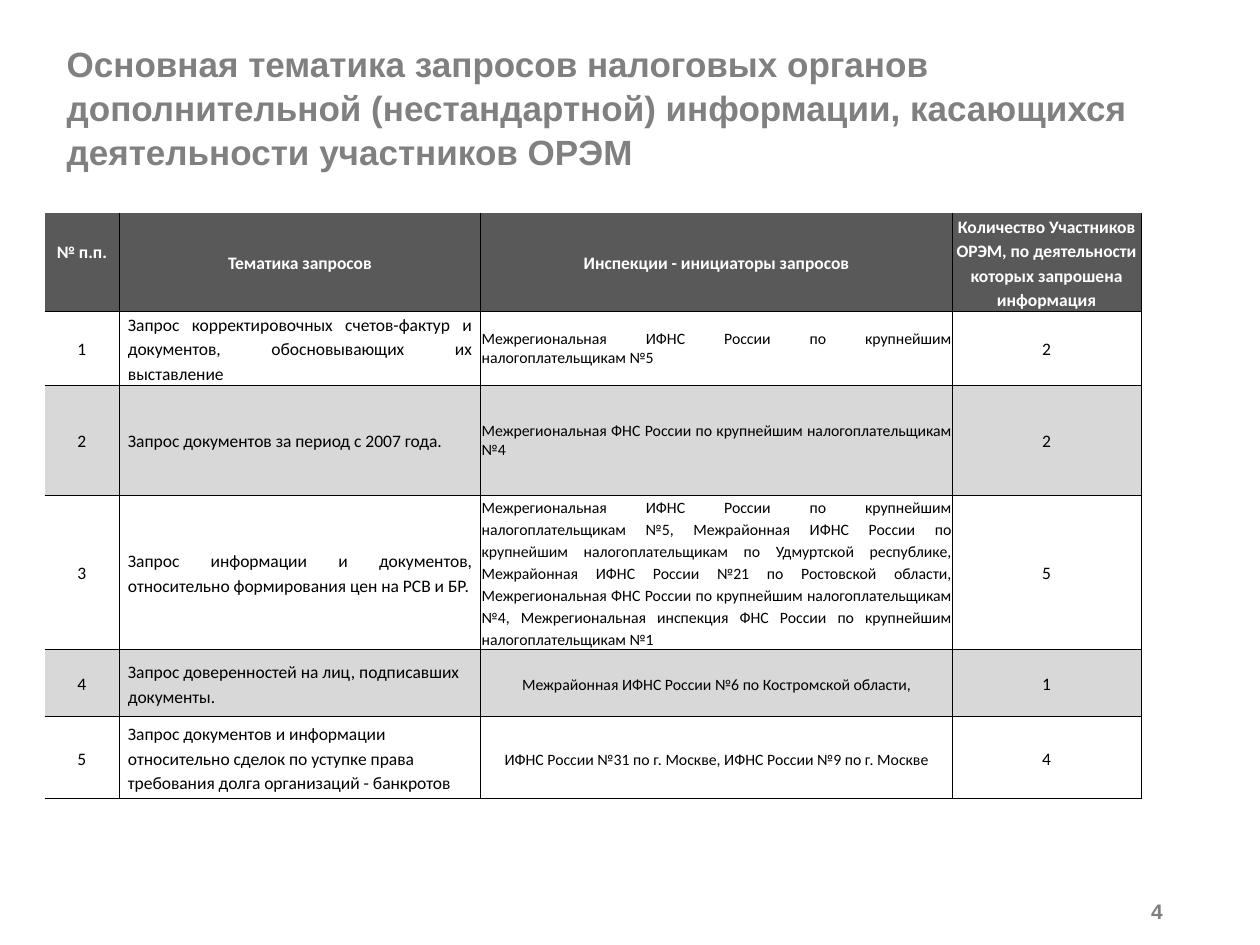
import pptx
import pptx.dml.color
import pptx.enum.text
import pptx.oxml
import pptx.oxml.ns
import pptx.util
from pptx.util import Cm, Pt

RGBColor = pptx.dml.color.RGBColor
ALIGN = pptx.enum.text.PP_ALIGN
MIDDLE = pptx.enum.text.MSO_ANCHOR.MIDDLE

BLACK = RGBColor(0x00, 0x00, 0x00)
WHITE = RGBColor(0xFF, 0xFF, 0xFF)
TITLE_GRAY = RGBColor(0x80, 0x80, 0x80)
NUMBER_GRAY = RGBColor(0x7F, 0x7F, 0x7F)
HEADER_GRAY = RGBColor(0x59, 0x59, 0x59)
BAND_GRAY = RGBColor(0xD8, 0xD8, 0xD8)

HEADERS = [
    "№ п.п.",
    "Тематика запросов",
    "Инспекции - инициаторы запросов",
    "Количество Участников ОРЭМ, по деятельности которых запрошена информация",
]
# topic, its alignment, inspections, their alignment, their line spacing, participants
REQUESTS = [
    ("Запрос корректировочных счетов-фактур и документов, обосновывающих их выставление",
     ALIGN.JUSTIFY,
     "Межрегиональная ИФНС России по крупнейшим налогоплательщикам №5",
     ALIGN.JUSTIFY, 1.0, 2),
    ("Запрос документов за период с 2007 года.", ALIGN.JUSTIFY,
     "Межрегиональная ФНС России по крупнейшим налогоплательщикам №4",
     ALIGN.JUSTIFY, 1.0, 2),
    ("Запрос информации и документов, относительно формирования цен на РСВ и БР.",
     ALIGN.JUSTIFY,
     "Межрегиональная ИФНС России по крупнейшим налогоплательщикам №5, "
     "Межрайонная ИФНС России по крупнейшим налогоплательщикам по Удмуртской республике, "
     "Межрайонная ИФНС России №21 по Ростовской области, "
     "Межрегиональная ФНС России по крупнейшим налогоплательщикам №4, "
     "Межрегиональная инспекция ФНС России по крупнейшим налогоплательщикам №1",
     ALIGN.JUSTIFY, 1.15, 5),
    ("Запрос доверенностей на лиц, подписавших документы.", ALIGN.LEFT,
     "Межрайонная ИФНС России №6 по Костромской области,", ALIGN.CENTER, 1.15, 1),
    ("Запрос документов и информации относительно сделок по уступке права требования "
     "долга организаций - банкротов", ALIGN.LEFT,
     "ИФНС России №31 по г. Москве, ИФНС России №9 по г. Москве", ALIGN.CENTER, 1.15, 4),
]
COLUMN_WIDTHS = [1.5, 7.29, 9.5, 3.81]
ROW_HEIGHTS = [1.98, 1.5, 2.21, 3.12, 1.35, 1.65]


def write(frame, text, align, spacing, font):
    para = frame.paragraphs[0]
    para.alignment = align
    para.line_spacing = spacing
    span = para.add_run()
    span.text = text
    for name, value in font.items():
        if name == "color":
            span.font.color.rgb = value
        else:
            setattr(span.font, name, value)


def set_borders(cell, visible):
    """Draw thin black lines on the visible sides (L, R, T, B) and none on the others."""
    properties = cell._tc.get_or_add_tcPr()
    for place, side in enumerate("LRTB"):
        paint = f'<a:solidFill><a:srgbClr val="{BLACK}"/></a:solidFill>'
        if side not in visible:
            paint = "<a:noFill/>"
        line = pptx.oxml.parse_xml(
            f'<a:ln{side} {pptx.oxml.ns.nsdecls("a")} w="{Pt(0.5)}">{paint}</a:ln{side}>')
        properties.insert(place, line)


deck = pptx.Presentation()
deck.slide_width, deck.slide_height = Cm(25.4), Cm(19.05)
page = deck.slides.add_slide(deck.slide_layouts[5])

title = page.shapes.title
title.left, title.top, title.width, title.height = Cm(1.09), Cm(0.76), Cm(22.4), Cm(2.77)
title.text_frame.word_wrap = True
title.text_frame.auto_size = pptx.enum.text.MSO_AUTO_SIZE.NONE
title.text_frame.vertical_anchor = MIDDLE
write(title.text_frame,
      "Основная тематика запросов налоговых органов дополнительной (нестандартной) "
      "информации, касающихся деятельности участников ОРЭМ",
      ALIGN.LEFT, 1.05,
      {"name": "Arial", "size": Pt(20), "bold": True, "color": TITLE_GRAY})

number_box = page.shapes.add_textbox(Cm(20.9), Cm(17.93), Cm(2.79), Cm(0.86))
number_box.text_frame.word_wrap = True
number_box.text_frame.vertical_anchor = MIDDLE
write(number_box.text_frame, "4", ALIGN.RIGHT, 1.0,
      {"name": "Arial", "size": Pt(12), "bold": True, "color": NUMBER_GRAY})

table = page.shapes.add_table(
    len(ROW_HEIGHTS), len(COLUMN_WIDTHS), Cm(0.9), Cm(4.29),
    Cm(sum(COLUMN_WIDTHS)), Cm(sum(ROW_HEIGHTS))).table
for column, width in zip(table.columns, COLUMN_WIDTHS):
    column.width = Cm(width)
for row, height in zip(table.rows, ROW_HEIGHTS):
    row.height = Cm(height)

rows = [[(header, ALIGN.CENTER, 1.15) for header in HEADERS]]
for number, request in enumerate(REQUESTS, 1):
    topic, topic_align, inspections, inspections_align, spacing, participants = request
    rows.append([
        (str(number), ALIGN.CENTER, 1.15),
        (topic, topic_align, 1.15),
        (inspections, inspections_align, spacing),
        (str(participants), ALIGN.CENTER, 1.15),
    ])

for r, row in enumerate(rows):
    is_header = r == 0
    fill = HEADER_GRAY if is_header else (WHITE if r % 2 else BAND_GRAY)
    for c, (text, align, spacing) in enumerate(row):
        cell = table.cell(r, c)
        cell.fill.solid()
        cell.fill.fore_color.rgb = fill
        cell.vertical_anchor = MIDDLE
        is_tight = is_header or c == 2
        cell.margin_left = cell.margin_right = Cm(0.02 if is_tight else 0.18)
        cell.margin_top = Cm(0.02 if is_tight else 0)
        cell.margin_bottom = Cm(0)
        set_borders(cell, "RB" + ("L" if c else "") + ("" if is_header else "T"))
        write(cell.text_frame, text, align, spacing,
              {"name": "Calibri", "bold": is_header,
               "size": Pt(9 if c == 2 and not is_header else 10),
               "color": WHITE if is_header else BLACK})

# The heading of the number column sits a little above the middle
table.cell(0, 0).margin_bottom = Cm(0.45)

deck.save("out.pptx")
